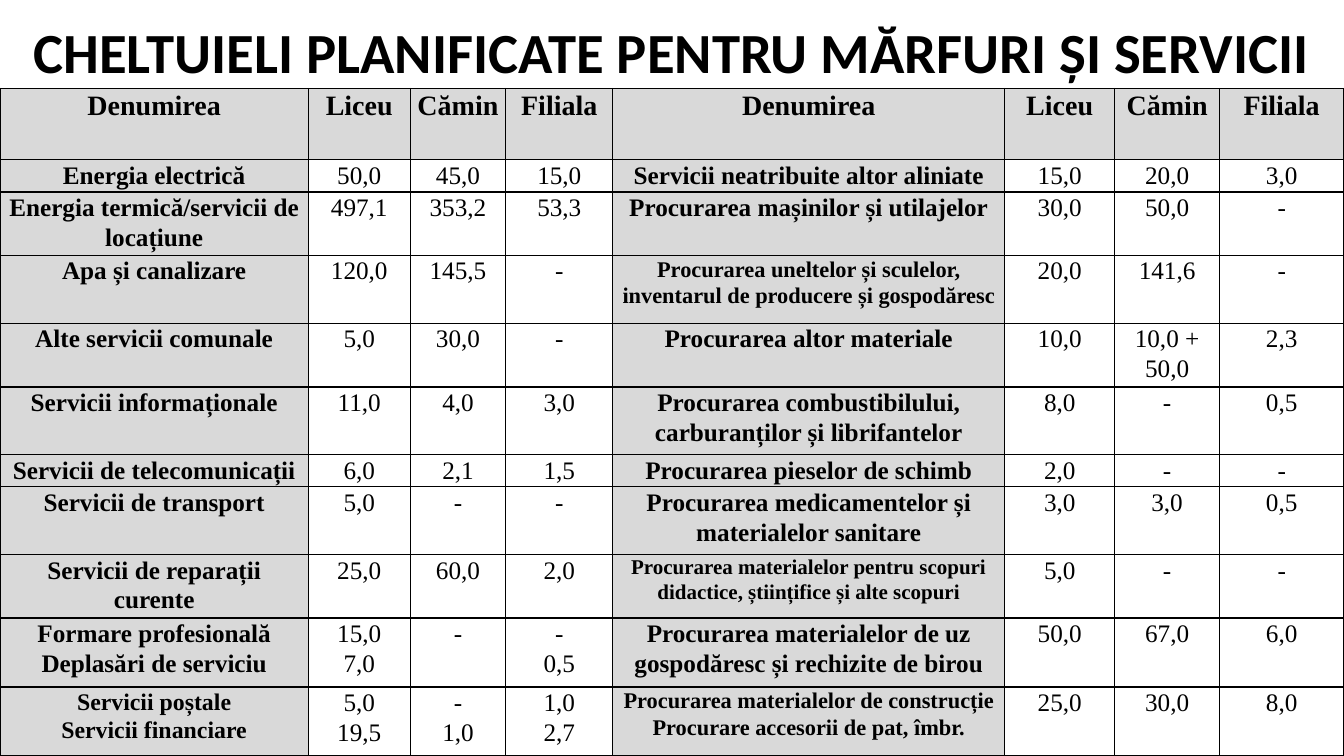
from lxml import etree
from pptx import Presentation
from pptx.dml.color import RGBColor
from pptx.enum import text
from pptx.oxml import ns
from pptx.util import Pt

COLOURS = {"ink": "000000", "paper": "FFFFFF", "label": "D9D9D9"}
COLUMNS = [220.3, 72.7, 68.4, 76.3, 280.1, 78.5, 74.9, 88.8]
HEIGHTS = [51, 23, 45.3, 48.4, 45.5, 48.4, 23, 48.4, 45.3, 49.3, 49.2]
LABEL_COLUMNS = (0, 4)
HEADER = ["Denumirea", "Liceu", "Cămin", "Filiala"] * 2
EXPENSES = [
    ["Energia electrică", "50,0", "45,0", "15,0",
     "Servicii neatribuite altor aliniate", "15,0", "20,0", "3,0"],
    ["Energia termică/servicii de locațiune", "497,1", "353,2", "53,3",
     "Procurarea mașinilor și utilajelor", "30,0", "50,0", "-"],
    ["Apa și canalizare", "120,0", "145,5", "-",
     "Procurarea uneltelor și sculelor, inventarul de producere și gospodăresc",
     "20,0", "141,6", "-"],
    ["Alte servicii comunale", "5,0", "30,0", "-",
     "Procurarea altor materiale", "10,0", "10,0 +\n50,0", "2,3"],
    ["Servicii informaționale", "11,0", "4,0", "3,0",
     "Procurarea combustibilului, carburanților și librifantelor", "8,0", "-", "0,5"],
    ["Servicii de telecomunicații", "6,0", "2,1", "1,5",
     "Procurarea pieselor de schimb", "2,0", "-", "-"],
    ["Servicii de transport", "5,0", "-", "-",
     "Procurarea medicamentelor și materialelor sanitare", "3,0", "3,0", "0,5"],
    ["Servicii de reparații curente", "25,0", "60,0", "2,0",
     "Procurarea materialelor pentru scopuri didactice, științifice și alte scopuri",
     "5,0", "-", "-"],
    ["Formare profesională\nDeplasări de serviciu", "15,0\n7,0", "-", "-\n0,5",
     "Procurarea materialelor de uz gospodăresc și rechizite de birou",
     "50,0", "67,0", "6,0"],
    ["Servicii poștale\nServicii financiare", "5,0\n19,5", "-\n1,0", "1,0\n2,7",
     "Procurarea materialelor de construcție\nProcurare accesorii de pat, îmbr.",
     "25,0", "30,0", "8,0"],
]
HEADER_SIZE, BODY_SIZE = 20, 18
SMALL_LABELS = {(3, 4): 16, (8, 4): 15, (10, 0): 17, (10, 4): 16}


class BudgetSlide:
    """Hold the style and the current slide, and draw its elements."""

    def __init__(self, presentation):
        self.slide = presentation.slides.add_slide(presentation.slide_layouts[5])
        self.title_font = "Calibri"
        self.table_font = "Times New Roman"

    def colour(self, name):
        return RGBColor.from_string(COLOURS[name])

    def fill(self, target, name):
        target.fill.solid()
        target.fill.fore_color.rgb = self.colour(name)

    def add_text(self, frame, content, font, size, bold, spacing=1.0):
        for index, line in enumerate(content.split("\n")):
            paragraph = frame.add_paragraph() if index else frame.paragraphs[0]
            paragraph.alignment = text.PP_ALIGN.CENTER
            paragraph.line_spacing = spacing
            run = paragraph.add_run()
            run.text = line
            run.font.name = font
            run.font.size = Pt(size)
            run.font.bold = bold
            run.font.color.rgb = self.colour("ink")

    def title(self, content, left, top, width, height):
        shape = self.slide.shapes.title
        shape.left, shape.top = Pt(left), Pt(top)
        shape.width, shape.height = Pt(width), Pt(height)
        self.fill(shape, "paper")
        frame = shape.text_frame
        frame.word_wrap = True
        frame.auto_size = text.MSO_AUTO_SIZE.NONE
        frame.vertical_anchor = text.MSO_ANCHOR.MIDDLE
        self.add_text(frame, content, self.title_font, 40.5, True)

    def border(self, cell):
        properties = cell._tc.get_or_add_tcPr()
        for side in ("lnL", "lnR", "lnT", "lnB"):
            line = etree.SubElement(properties, ns.qn(f"a:{side}"), w=str(Pt(1)))
            solid = etree.SubElement(line, ns.qn("a:solidFill"))
            etree.SubElement(solid, ns.qn("a:srgbClr"), val=COLOURS["ink"])

    def cell(self, cell, content, size, is_label):
        cell.margin_left = cell.margin_right = Pt(3.6)
        cell.margin_top = cell.margin_bottom = Pt(0)
        self.border(cell)
        self.fill(cell, "label" if is_label else "paper")
        self.add_text(cell.text_frame, content, self.table_font, size, is_label, 1.07)

    def table(self, rows, left, top):
        table = self.slide.shapes.add_table(
            len(rows), len(COLUMNS), Pt(left), Pt(top),
            Pt(sum(COLUMNS)), Pt(sum(HEIGHTS))).table
        table.first_row = table.horz_banding = False
        for column, width in zip(table.columns, COLUMNS):
            column.width = Pt(width)
        for row, height in zip(table.rows, HEIGHTS):
            row.height = Pt(height)
        for r, row in enumerate(rows):
            for c, content in enumerate(row):
                size = SMALL_LABELS.get((r, c), BODY_SIZE if r else HEADER_SIZE)
                self.cell(table.cell(r, c), content, size, r == 0 or c in LABEL_COLUMNS)


def main():
    presentation = Presentation()
    presentation.slide_width, presentation.slide_height = Pt(960), Pt(540)
    budget = BudgetSlide(presentation)
    budget.title("CHELTUIELI PLANIFICATE PENTRU MĂRFURI ȘI SERVICII", 0, -8.6, 960, 90)
    budget.table([HEADER, *EXPENSES], 0, 63.2)
    presentation.save("out.pptx")


if __name__ == "__main__":
    main()
